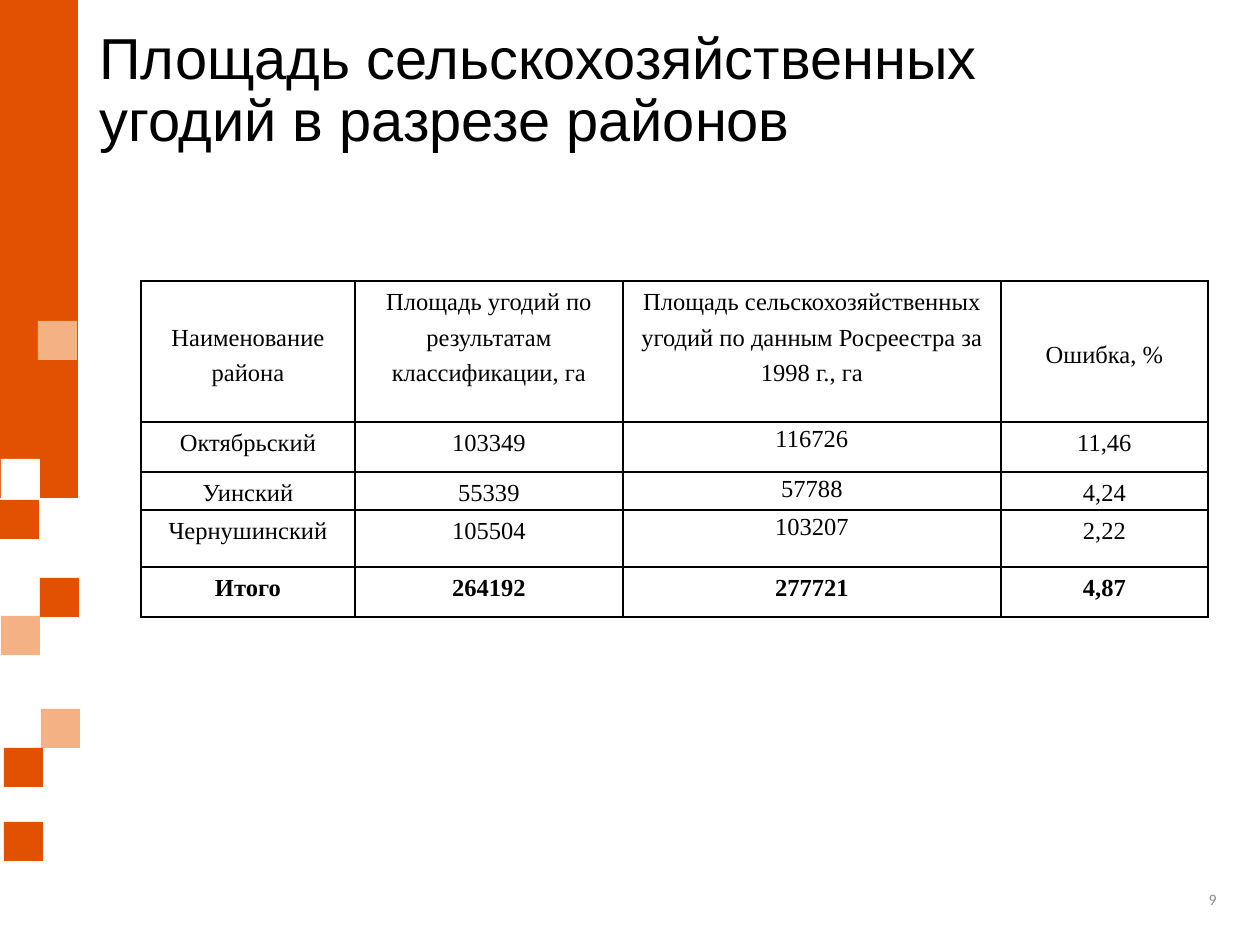
import pptx
import pptx.util
import pptx.dml.color
import pptx.enum.shapes
import pptx.enum.text
import pptx.oxml
import pptx.oxml.ns
from dataclasses import dataclass

PX = 914400 / 126
ALIGN = pptx.enum.text.PP_ALIGN
ANCHOR = pptx.enum.text.MSO_ANCHOR


@dataclass(frozen=True)
class Theme:
    orange: str = "E15101"
    peach: str = "F4B183"
    white: str = "FFFFFF"
    black: str = "000000"
    grey: str = "8C8C8C"
    title_size: int = 33
    table_size: int = 14
    number_size: int = 9
    border_width: int = 1


THEME = Theme()

# Left, top and colour of the squares beside the band
SQUARE = 39
SQUARES = [
    (41, 709, THEME.peach), (1, 459, THEME.white), (40, 578, THEME.orange),
    (0, 500, THEME.orange), (4, 748, THEME.orange), (1, 616, THEME.peach),
    (38, 321, THEME.peach), (4, 822, THEME.orange),
]

COLUMNS = [214, 268, 378, 207]
ROWS = [141, 50, 38, 57, 50]
AREAS = [
    ["Наименование района", "Площадь угодий по результатам классификации, га",
     "Площадь сельскохозяйственных угодий по данным Росреестра за 1998 г., га",
     "Ошибка, %"],
    ["Октябрьский", "103349", "116726", "11,46"],
    ["Уинский", "55339", "57788", "4,24"],
    ["Чернушинский", "105504", "103207", "2,22"],
    ["Итого", "264192", "277721", "4,87"],
]


def emu(*lengths):
    return [round(length * PX) for length in lengths]


def rgb(colour):
    return pptx.dml.color.RGBColor.from_string(colour)


def set_values(target, values):
    for name, value in values.items():
        setattr(target, name, value)


def write(frame, text, font, size, colour, bold=False, **para_format):
    para = frame.paragraphs[0]
    set_values(para, para_format)
    span = para.add_run()
    span.text = text
    set_values(span.font, {"name": font, "size": pptx.util.Pt(size), "bold": bold})
    span.font.color.rgb = rgb(colour)


def add_block(page, left, top, width, height, colour):
    block = page.shapes.add_shape(
        pptx.enum.shapes.MSO_SHAPE.RECTANGLE, *emu(left, top, width, height))
    block.shadow.inherit = False
    block.fill.solid()
    block.fill.fore_color.rgb = rgb(colour)
    block.line.fill.background()


def add_text(page, bounds, text, font, size, colour, **para_format):
    box = page.shapes.add_textbox(*emu(*bounds))
    set_values(box.text_frame, {"word_wrap": True, "vertical_anchor": ANCHOR.MIDDLE})
    write(box.text_frame, text, font, size, colour, **para_format)


def add_borders(cell):
    properties = cell._tc.get_or_add_tcPr()
    width = pptx.util.Pt(THEME.border_width)
    for index, side in enumerate(("lnL", "lnR", "lnT", "lnB")):
        properties.insert(index, pptx.oxml.parse_xml(
            f'<a:{side} {pptx.oxml.ns.nsdecls("a")} w="{width}"><a:solidFill>'
            f'<a:srgbClr val="{THEME.black}"/></a:solidFill></a:{side}>'))


def add_area_table(page, left, top):
    table = page.shapes.add_table(
        len(ROWS), len(COLUMNS), *emu(left, top, sum(COLUMNS), sum(ROWS))).table
    set_values(table, {"first_row": False, "horz_banding": False})
    for column, width in zip(table.columns, emu(*COLUMNS)):
        column.width = width
    for row, height in zip(table.rows, emu(*ROWS)):
        row.height = height

    side, none = emu(4, 0)
    last = len(ROWS) - 1
    for r, texts in enumerate(AREAS):
        for c, text in enumerate(texts):
            cell = table.cell(r, c)
            middle = r == 0 and c in (0, 3)
            set_values(cell, {
                "margin_left": side, "margin_right": side,
                "margin_top": none, "margin_bottom": none,
                "vertical_anchor": ANCHOR.MIDDLE if middle else ANCHOR.TOP,
            })
            cell.fill.background()
            add_borders(cell)
            # Registry figures sit on a tighter line
            tight = c == 2 and 0 < r < last
            write(cell.text_frame, text, "Times New Roman", THEME.table_size,
                  THEME.black, bold=r == last, alignment=ALIGN.CENTER,
                  line_spacing=1.15 if tight else 1.3)


def main():
    deck = pptx.Presentation()
    deck.slide_width, deck.slide_height = emu(1260, 945)
    page = deck.slides.add_slide(deck.slide_layouts[6])

    # Side band and squares
    add_block(page, 0, 0, 78, 498, THEME.orange)
    for left, top, colour in SQUARES:
        add_block(page, left, top, SQUARE, SQUARE, colour)

    # Table, page number and title
    add_area_table(page, 141, 281)
    add_text(page, (945, 874, 284, 50), "9", "Calibri", THEME.number_size,
             THEME.grey, alignment=ALIGN.RIGHT)
    add_text(page, (87, 0, 1086, 183),
             "Площадь сельскохозяйственных угодий в разрезе районов",
             "Arial", THEME.title_size, THEME.black, line_spacing=0.9)

    deck.save("out.pptx")


if __name__ == "__main__":
    main()
